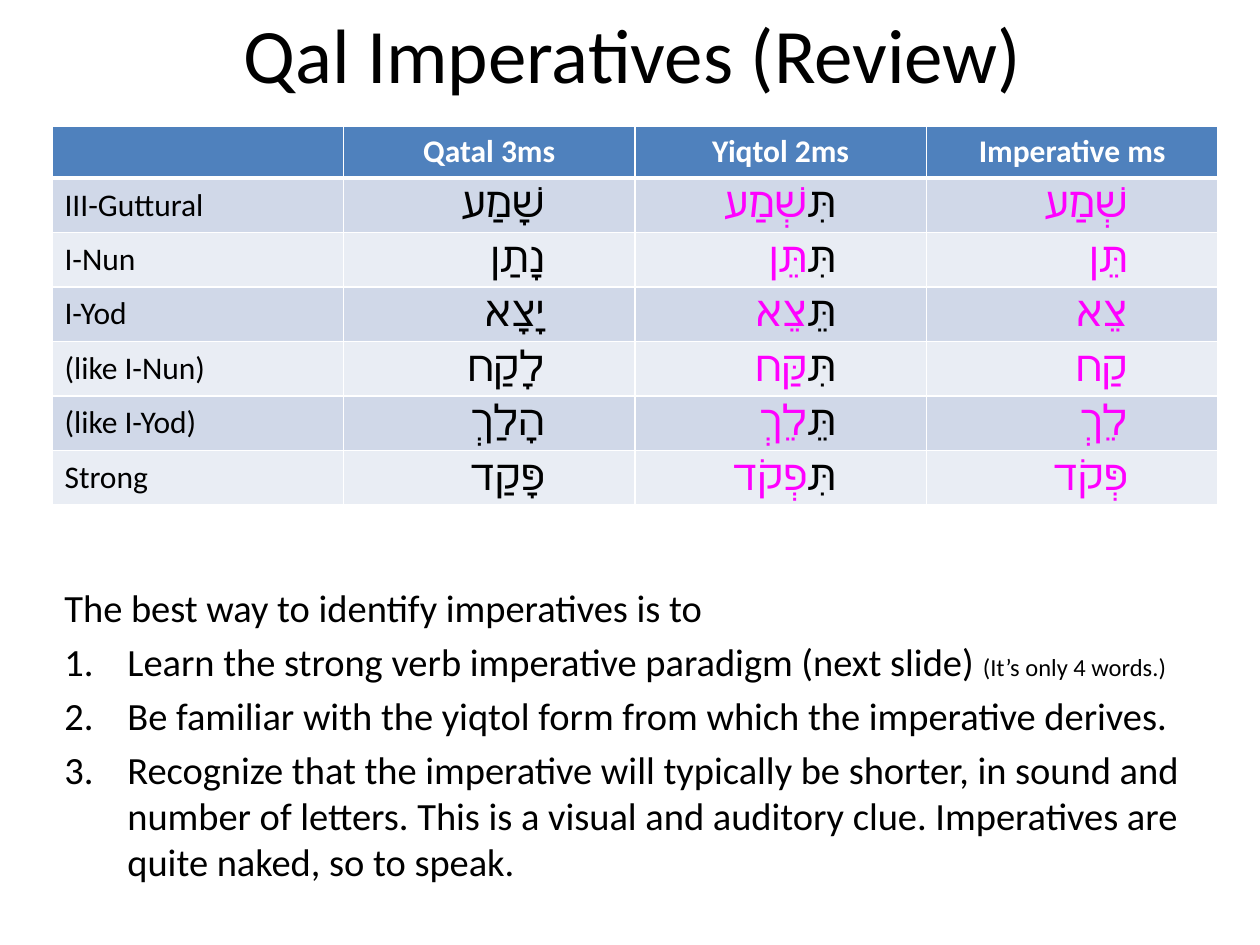
from lxml import etree
from pptx import Presentation
from pptx.dml.color import RGBColor
from pptx.enum.text import MSO_ANCHOR, PP_ALIGN
from pptx.oxml.ns import qn
from pptx.util import Emu, Pt

PX = 914400 // 126
BLACK = RGBColor(0x00, 0x00, 0x00)
WHITE = RGBColor(0xFF, 0xFF, 0xFF)
MAGENTA = RGBColor(0xFF, 0x00, 0xFF)
HEADER_BLUE = RGBColor(0x4F, 0x81, 0xBD)
BANDS = [RGBColor(0xD0, 0xD8, 0xE8), RGBColor(0xE9, 0xED, 0xF4)]
LATIN, HEBREW = "Calibri", "Arial"
LEFT, CENTER, RIGHT = PP_ALIGN.LEFT, PP_ALIGN.CENTER, PP_ALIGN.RIGHT
MIDDLE = MSO_ANCHOR.MIDDLE

# Content
TITLE = "Qal Imperatives (Review)"
HEADERS = ["", "Qatal 3ms", "Yiqtol 2ms", "Imperative ms"]
# verb class, qatal, yiqtol prefix, yiqtol stem, imperative
VERBS = [
    ("III-Guttural", "שָׁמַע", "תִּ", "שְׁמַע", "שְׁמַע"),
    ("I-Nun", "נָתַן", "תִּ", "תֵּן", "תֵּן"),
    ("I-Yod", "יָצָא", "תֵּ", "צֵא", "צֵא"),
    ("(like I-Nun)", "לָקַח", "תִּ", "קַּח", "קַח"),
    ("(like I-Yod)", "הָלַךְ", "תֵּ", "לֵךְ", "לֵךְ"),
    ("Strong", "פָּקַד", "תִּ", "פְקֹד", "פְּקֹד"),
]
INTRO = "The best way to identify imperatives is to"
STEPS = [
    [("Learn the strong verb imperative paradigm (next slide) ", 22),
     ("(It’s only 4 words.)", 14)],
    [("Be familiar with the yiqtol form from which the imperative derives.", 22)],
    [("Recognize that the imperative will typically be shorter, in sound and "
      "number of letters. This is a visual and auditory clue. Imperatives are "
      "quite naked, so to speak.", 22)],
]

# Layout in px
TITLE_BOX = (66, 0, 1134, 105)
TABLE_LEFT, TABLE_TOP, TABLE_WIDTH = 52, 126, 1166
HEADER_HEIGHT, VERB_ROWS_HEIGHT = 52, 327
STEPS_BOX = (52, 578, 1166, 347)
HEBREW_TAB, STEP_INDENT = 78, 63


def px(*lengths):
    return [Emu(length * PX) for length in lengths]


def add_run(paragraph, text, size, color=BLACK, font=LATIN, bold=False):
    run = paragraph.add_run()
    run.text = text
    run.font.size = Pt(size)
    run.font.name = font
    run.font.bold = bold
    run.font.color.rgb = color


def fill_cell(cell, fill, align):
    cell.fill.solid()
    cell.fill.fore_color.rgb = fill
    cell.vertical_anchor = MIDDLE
    paragraph = cell.text_frame.paragraphs[0]
    paragraph.alignment = align
    return paragraph


def underline_header(cell):
    border = etree.Element(qn("a:lnB"), w=str(Pt(3)))
    solid = etree.SubElement(border, qn("a:solidFill"))
    etree.SubElement(solid, qn("a:srgbClr"), val=str(WHITE))
    cell._tc.get_or_add_tcPr().insert(0, border)


def fill_hebrew_cell(cell, fill, parts):
    paragraph = fill_cell(cell, fill, RIGHT)
    cell.margin_top = cell.margin_bottom = 0
    properties = paragraph._p.get_or_add_pPr()
    properties.set("rtl", "1")
    tabs = etree.SubElement(properties, qn("a:tabLst"))
    etree.SubElement(tabs, qn("a:tab"), pos=str(HEBREW_TAB * PX), algn="r")
    for index, (text, color) in enumerate(parts):
        add_run(paragraph, text if index else "\t" + text, 24, color, HEBREW)


prs = Presentation()
prs.slide_width, prs.slide_height = px(1260, 945)
slide = prs.slides.add_slide(prs.slide_layouts[5])

# Title
title = slide.shapes.title
title.left, title.top, title.width, title.height = px(*TITLE_BOX)
title.text_frame.vertical_anchor = MIDDLE
heading = title.text_frame.paragraphs[0]
heading.alignment = CENTER
add_run(heading, TITLE, 44)

# Verb table
table = slide.shapes.add_table(
    len(VERBS) + 1, len(HEADERS),
    *px(TABLE_LEFT, TABLE_TOP, TABLE_WIDTH, HEADER_HEIGHT + VERB_ROWS_HEIGHT)).table
table.rows[0].height = Emu(HEADER_HEIGHT * PX)
for column, header in enumerate(HEADERS):
    cell = table.cell(0, column)
    paragraph = fill_cell(cell, HEADER_BLUE, CENTER)
    underline_header(cell)
    if header:
        add_run(paragraph, header, 18, WHITE, bold=True)
for row, (verb_class, qatal, prefix, stem, imperative) in enumerate(VERBS, 1):
    table.rows[row].height = Emu(VERB_ROWS_HEIGHT * PX // len(VERBS))
    band = BANDS[(row - 1) % 2]
    add_run(fill_cell(table.cell(row, 0), band, LEFT), verb_class, 18)
    forms = [[(qatal, BLACK)],
             [(prefix, BLACK), (stem, MAGENTA)],
             [(imperative, MAGENTA)]]
    for column, parts in enumerate(forms, 1):
        fill_hebrew_cell(table.cell(row, column), band, parts)

# Numbered advice
advice = slide.shapes.add_textbox(*px(*STEPS_BOX)).text_frame
advice.word_wrap = True
intro = advice.paragraphs[0]
intro.space_before = Pt(4.4)
add_run(intro, INTRO, 22)
for step in STEPS:
    paragraph = advice.add_paragraph()
    paragraph.space_before = Pt(4.4)
    properties = paragraph._p.get_or_add_pPr()
    properties.set("marL", str(STEP_INDENT * PX))
    properties.set("indent", str(-STEP_INDENT * PX))
    etree.SubElement(properties, qn("a:buFont"), typeface="+mj-lt")
    etree.SubElement(properties, qn("a:buAutoNum"), type="arabicPeriod")
    for text, size in step:
        add_run(paragraph, text, size)

prs.save("out.pptx")
